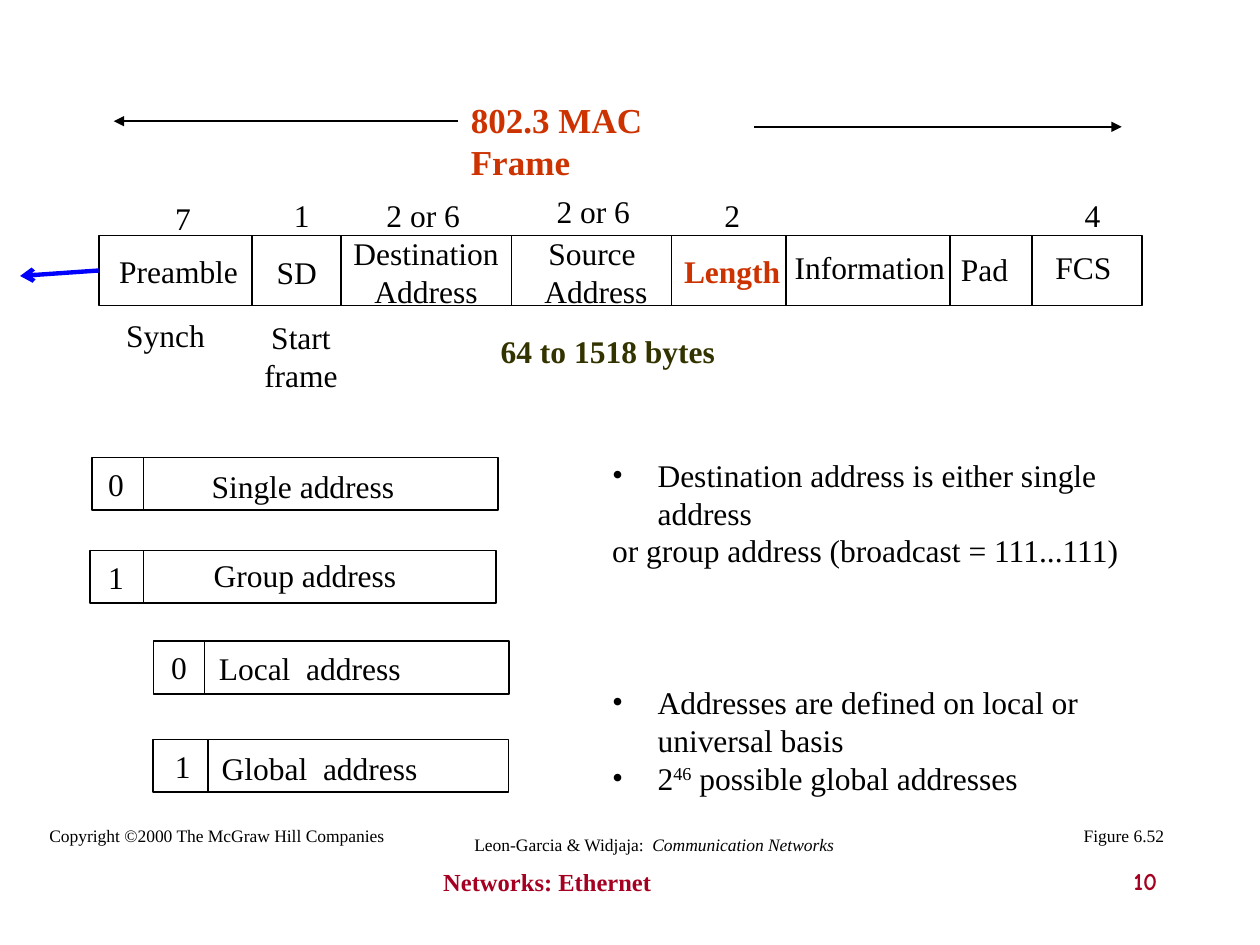
from dataclasses import dataclass

from pptx import Presentation
from pptx import util as u
from pptx.dml.color import RGBColor
from pptx.enum import shapes, text
from pptx.oxml.xmlchemy import OxmlElement

BLACK = RGBColor(0x00, 0x00, 0x00)
BLUE = RGBColor(0x00, 0x00, 0xFF)
RUST = RGBColor(0xCC, 0x33, 0x00)
OLIVE = RGBColor(0x33, 0x33, 0x00)
CRIMSON = RGBColor(0xA5, 0x00, 0x21)
SERIF = "Times New Roman"
LEFT, CENTER, RIGHT = text.PP_ALIGN.LEFT, text.PP_ALIGN.CENTER, text.PP_ALIGN.RIGHT


@dataclass(frozen=True)
class Label:
    txt: str
    x: float
    y: float
    w: float
    h: float = 29
    size: float = 18
    color: RGBColor = BLACK
    bold: bool = False
    font: str = SERIF
    align: text.PP_ALIGN = LEFT
    italic_txt: str = ""


@dataclass(frozen=True)
class AddressFormat:
    bit: str
    name: str
    x: float
    y: float
    w: float
    bit_x: float
    divider: float
    name_x: float
    name_y: float


@dataclass(frozen=True)
class Note:
    txt: str
    bullet: bool = True
    before: float = 0
    raised: str = ""
    rest: str = ""


FRAME_X, FRAME_Y, FRAME_W, FRAME_H = 56.4, 134.6, 596, 40
FRAME_DIVIDERS = (144, 195, 292.3, 383.8, 449.3, 543, 589.7)
BIT_W, NAME_W, ADDRESS_H = 23, 130, 30.2

FIELDS = (
    Label("Preamble", 61, 140.4, 82),
    Label("SD", 151, 141, 37.5),
    Label("Destination\nAddress", 195, 130.3, 97, 50, align=CENTER),
    Label("Source \nAddress", 303.8, 130.3, 73.5, 50, align=CENTER),
    Label("Length", 383.8, 140.4, 69, color=RUST, bold=True),
    Label("Information", 447, 138.2, 100),
    Label("Pad", 542, 139.4, 41),
    Label("FCS", 596, 138.2, 46),
)
OCTETS = (
    Label("7", 93, 110.2, 23),
    Label("1", 160.8, 108.7, 23),
    Label("2 or 6", 213.8, 108.7, 56),
    Label("2 or 6", 311, 106.3, 56),
    Label("2", 406.8, 108.7, 23),
    Label("4", 612.7, 108.7, 23),
)
CAPTIONS = (
    Label("802.3 MAC Frame", 262, 53, 150, 31, 20, RUST, True),
    Label("64 to 1518 bytes", 279, 186, 145, color=OLIVE, bold=True),
    Label("Synch", 65, 177, 59),
    Label("Start\nframe", 144, 178.3, 56, 50, align=CENTER),
)
FOOTERS = (
    Label("Copyright ©2000 The McGraw Hill Companies", 20.3, 468, 207, 19, 10, align=CENTER),
    Label("Leon-Garcia & Widjaja:  ", 262.8, 473, 222, 19, 10, align=CENTER,
          italic_txt="Communication Networks"),
    Label("Figure 6.52", 612, 468, 60.5, 19, 10, align=CENTER),
    Label("Networks: Ethernet", 246.2, 491.8, 228, 36, 14, CRIMSON, True),
    Label("10", 518.4, 491.3, 150, 36, 14, CRIMSON, True, "Comic Neue", RIGHT),
)
ADDRESSES = (
    AddressFormat("0", "Single address", 52.6, 261.4, 232, 54.7, 82, 113.8, 263.5),
    AddressFormat("1", "Group address", 51.6, 314.6, 232, 54.7, 82, 115, 314.4),
    AddressFormat("0", "Local  address", 87.8, 366.3, 203, 90.7, 116.8, 118, 367.2),
    AddressFormat("1", "Global  address", 87.6, 422.6, 203, 92.9, 118.8, 119.6, 424.2),
)
NOTES = (
    Note("Destination address is either single address"),
    Note("or group address (broadcast = 111...111)", bullet=False),
    Note("Addresses are defined on local or universal basis", before=65),
    Note("2", raised="46", rest=" possible global addresses"),
)


def add_run(p, txt: str, size: float = 18, color: RGBColor = BLACK,
            bold: bool = False, italic: bool = False, font: str = SERIF):
    r = p.add_run()
    r.text = txt
    r.font.size, r.font.name = u.Pt(size), font
    r.font.bold, r.font.italic = bold, italic
    r.font.color.rgb = color
    return r


def add_frame(s, x: float, y: float, w: float, h: float):
    tf = s.shapes.add_textbox(u.Pt(x), u.Pt(y), u.Pt(w), u.Pt(h)).text_frame
    tf.word_wrap = True
    return tf


def add_label(s, lb: Label) -> None:
    tf = add_frame(s, lb.x, lb.y, lb.w, lb.h)
    if lb.align != RIGHT:
        tf.margin_right = 0
    if lb.align == CENTER:
        tf.margin_left = 0
    for i, line in enumerate(lb.txt.split("\n")):
        p = tf.add_paragraph() if i else tf.paragraphs[0]
        p.alignment = lb.align
        add_run(p, line, lb.size, lb.color, lb.bold, font=lb.font)
        if lb.italic_txt:
            add_run(p, lb.italic_txt, lb.size, lb.color, italic=True)


def add_box(s, x: float, y: float, w: float, h: float):
    sp = s.shapes.add_shape(shapes.MSO_SHAPE.RECTANGLE, u.Pt(x), u.Pt(y), u.Pt(w), u.Pt(h))
    sp.shadow.inherit = False
    sp.fill.background()
    sp.line.color.rgb = BLACK
    sp.line.width = u.Pt(1)
    return sp


def add_line(s, x1: float, y1: float, x2: float, y2: float,
             color: RGBColor = BLACK, width: float = 1, arrow: str = ""):
    cx = s.shapes.add_connector(shapes.MSO_CONNECTOR.STRAIGHT,
                                u.Pt(x1), u.Pt(y1), u.Pt(x2), u.Pt(y2))
    cx.line.color.rgb = color
    cx.line.width = u.Pt(width)
    if arrow:
        end = OxmlElement("a:tailEnd")
        end.set("type", arrow)
        cx.line._get_or_add_ln().append(end)
    cx._element.spPr.append(OxmlElement("a:effectLst"))
    return cx


def add_address(s, a: AddressFormat) -> None:
    add_box(s, a.x, a.y, a.w, ADDRESS_H)
    add_line(s, a.divider, a.y, a.divider, a.y + ADDRESS_H)
    add_label(s, Label(a.bit, a.bit_x, a.y + 0.5, BIT_W))
    add_label(s, Label(a.name, a.name_x, a.name_y, NAME_W))


def add_bullet(p) -> None:
    pPr = p._p.get_or_add_pPr()
    pPr.set("marL", str(u.Pt(26)))
    pPr.set("indent", str(-u.Pt(26)))
    for tag, key, value in (("a:buFont", "typeface", SERIF), ("a:buChar", "char", "•")):
        el = OxmlElement(tag)
        el.set(key, value)
        pPr.append(el)


def add_notes(s, notes: tuple[Note, ...]) -> None:
    tf = add_frame(s, 342.7, 257, 341.3, 180)
    for i, n in enumerate(notes):
        p = tf.add_paragraph() if i else tf.paragraphs[0]
        if n.before:
            p.space_before = u.Pt(n.before)
        if n.bullet:
            add_bullet(p)
        add_run(p, n.txt)
        if n.raised:
            add_run(p, n.raised)._r.get_or_add_rPr().set("baseline", "30000")
            add_run(p, n.rest)


def main() -> None:
    prs = Presentation()
    prs.slide_width, prs.slide_height = u.Pt(720), u.Pt(540)
    s = prs.slides.add_slide(prs.slide_layouts[6])
    frame = add_box(s, FRAME_X, FRAME_Y, FRAME_W, FRAME_H)
    for x in FRAME_DIVIDERS:
        add_line(s, x, FRAME_Y, x, FRAME_Y + FRAME_H)
    add_line(s, 262, 69.3, 65, 69.3, arrow="triangle")
    add_line(s, 430.8, 72.5, 641, 72.5, arrow="triangle")
    for a in ADDRESSES:
        add_address(s, a)
    for lb in FIELDS + OCTETS + CAPTIONS + FOOTERS:
        add_label(s, lb)
    add_notes(s, NOTES)
    sent = add_line(s, FRAME_X, FRAME_Y + FRAME_H / 2, 11.5, 157.7, BLUE, 2.5, "arrow")
    sent.begin_connect(frame, 1)
    prs.save("out.pptx")


if __name__ == "__main__":
    main()
